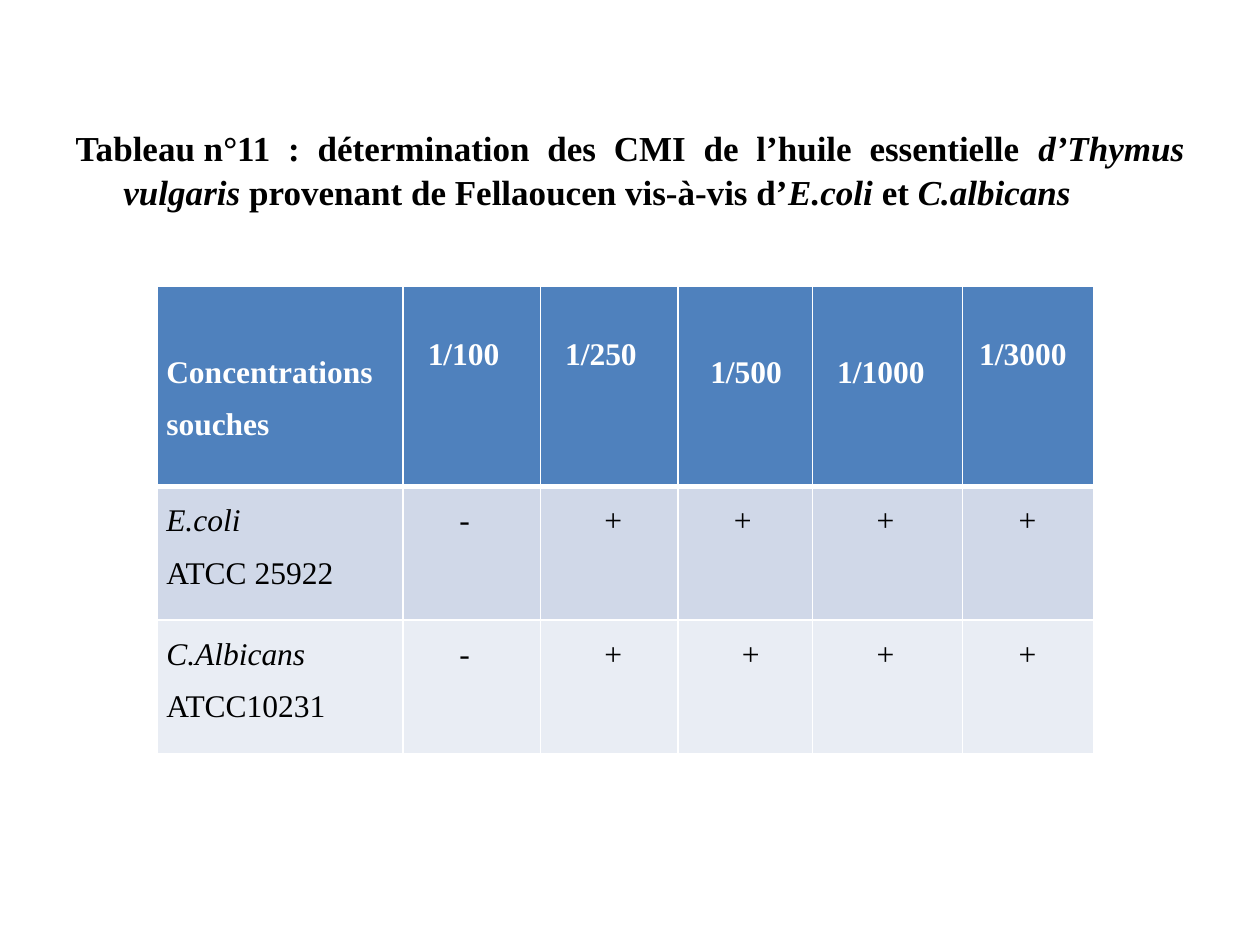
"""Build the slide with the table of minimum inhibitory concentrations of Thymus vulgaris oil."""
from lxml import etree
from pptx import Presentation
from pptx.dml.color import RGBColor
from pptx.enum.text import MSO_ANCHOR, MSO_AUTO_SIZE, PP_ALIGN
from pptx.oxml.ns import qn
from pptx.util import Inches, Pt

JUSTIFY = PP_ALIGN.JUSTIFY
LEFT = PP_ALIGN.LEFT
MIDDLE = MSO_ANCHOR.MIDDLE
TOP = MSO_ANCHOR.TOP
NO_AUTOFIT = MSO_AUTO_SIZE.NONE
BLACK = RGBColor(0x00, 0x00, 0x00)
WHITE = RGBColor(0xFF, 0xFF, 0xFF)
HEADER_BLUE = RGBColor(0x4F, 0x81, 0xBD)
BAND_DARK = RGBColor(0xD0, 0xD8, 0xE8)
BAND_LIGHT = RGBColor(0xE9, 0xED, 0xF4)
FONT = "Times New Roman"
CELL_MARGIN = Inches(0.07)
INDENT_STEP = Pt(4.5)
HANGING = Inches(0.38)


def write(paragraph, text, size=18, color=BLACK, bold=False, italic=False):
    run = paragraph.add_run()
    run.text = text
    run.font.name = FONT
    run.font.size = Pt(size)
    run.font.color.rgb = color
    run.font.bold = bold
    run.font.italic = italic


def add_border(cell, side, width):
    properties = cell._tc.get_or_add_tcPr()
    line = etree.SubElement(properties, qn(f"a:ln{side}"), w=str(Pt(width)))
    fill = etree.SubElement(line, qn("a:solidFill"))
    etree.SubElement(fill, qn("a:srgbClr"), val=str(WHITE))


presentation = Presentation()
presentation.slide_width = Inches(10)
presentation.slide_height = Inches(7.5)
slide = presentation.slides.add_slide(presentation.slide_layouts[5])

title = slide.shapes.title
title.left, title.top = Inches(0.5), Inches(0.55)
title.width, title.height = Inches(9), Inches(1.58)
title.text_frame.auto_size = NO_AUTOFIT
title.text_frame.word_wrap = True
title.text_frame.vertical_anchor = MIDDLE
caption = title.text_frame.paragraphs[0]
caption.alignment = JUSTIFY
caption.line_spacing = 1.05
caption_properties = caption._p.get_or_add_pPr()
caption_properties.set("marL", str(HANGING))
caption_properties.set("indent", str(-HANGING))
for text, italic in [
    ("Tableau\u00a0n°11 : détermination des CMI de l’huile essentielle ", False),
    ("d’Thymus vulgaris ", True),
    ("provenant de Fellaoucen vis-à-vis d’", False),
    ("E.coli ", True),
    ("et ", False),
    ("C.albicans", True),
]:
    write(caption, text, size=20, bold=True, italic=italic)

column_widths = [1.95, 1.09, 1.09, 1.07, 1.19, 1.04]
row_heights = [1.59, 1.06, 1.06]
row_fills = [HEADER_BLUE, BAND_DARK, BAND_LIGHT]
rows = [
    ["Concentrations\nsouches", "1/100", "1/250", "1/500", "1/1000", "1/3000"],
    ["E.coli\nATCC 25922", "-", "+", "+", "+", "+"],
    ["C.Albicans\nATCC10231", "-", "+", "+", "+", "+"],
]
indent_steps = [[0, 2, 2, 3, 2, 1], [0, 6, 7, 6, 7, 6], [0, 6, 7, 7, 7, 6]]
header_margins = [0.41, 0.27, 0.27, 0.41, 0.41, 0.27]

table = slide.shapes.add_table(
    len(rows), len(column_widths), Inches(1.25), Inches(2.27),
    Inches(sum(column_widths)), Inches(sum(row_heights)),
).table
for column, width in zip(table.columns, column_widths):
    column.width = Inches(width)

for row_index, texts in enumerate(rows):
    header = row_index == 0
    table.rows[row_index].height = Inches(row_heights[row_index])
    for column_index, text in enumerate(texts):
        cell = table.cell(row_index, column_index)
        cell.vertical_anchor = TOP
        cell.margin_left = CELL_MARGIN + indent_steps[row_index][column_index] * INDENT_STEP
        cell.margin_right = CELL_MARGIN if column_index == 0 else 0
        cell.margin_top = Inches(header_margins[column_index]) if header else 0
        cell.margin_bottom = 0
        for side, width in [
            ("L", 1), ("R", 1), ("T", 3 if row_index == 1 else 1), ("B", 3 if header else 1),
        ]:
            add_border(cell, side, width)
        cell.fill.solid()
        cell.fill.fore_color.rgb = row_fills[row_index]
        for line_index, line_text in enumerate(text.split("\n")):
            frame = cell.text_frame
            paragraph = frame.add_paragraph() if line_index else frame.paragraphs[0]
            paragraph.alignment = LEFT
            paragraph.line_spacing = 1.5
            write(
                paragraph, line_text, color=WHITE if header else BLACK, bold=header,
                italic=not header and column_index == 0 and line_index == 0,
            )

presentation.save("out.pptx")
